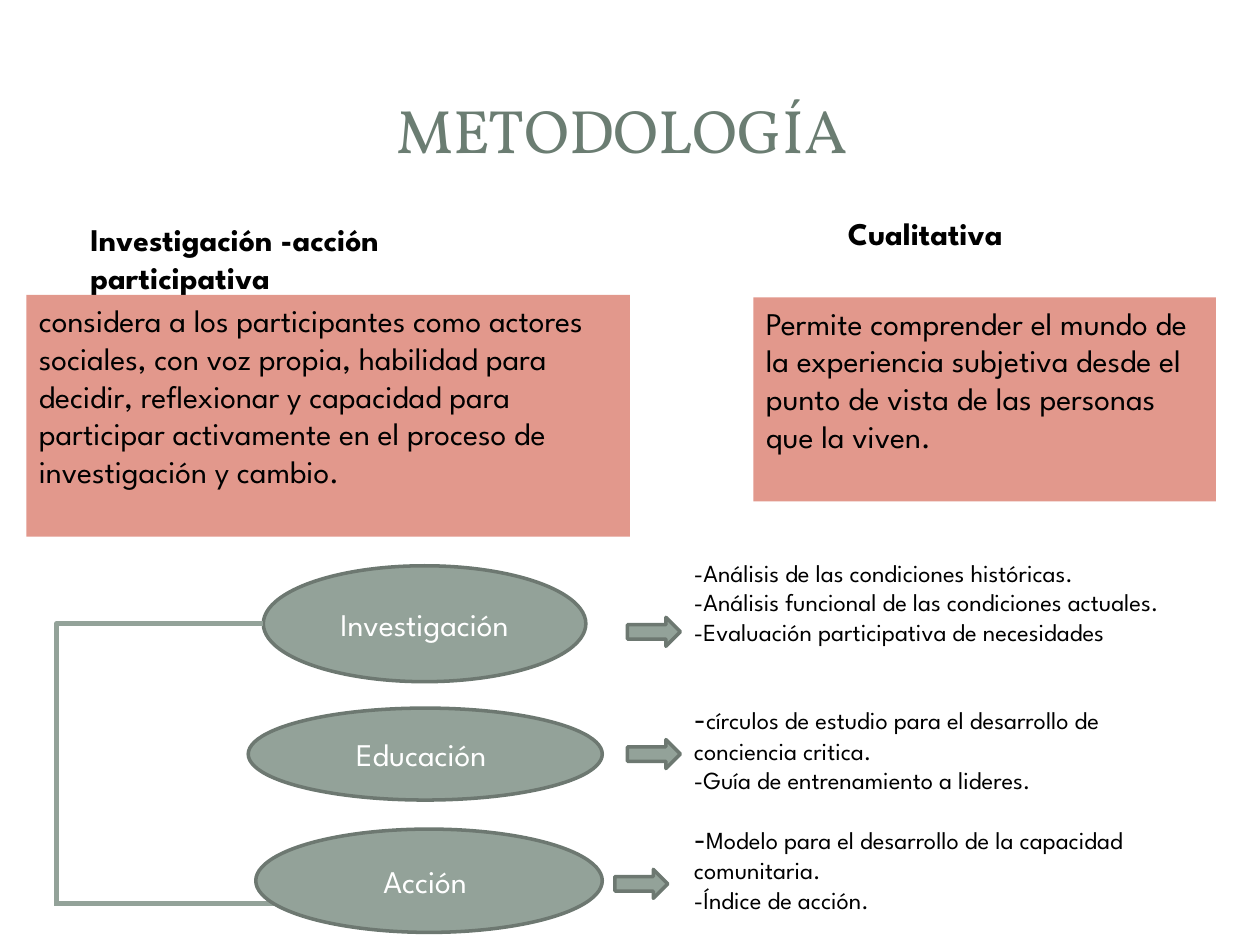
from lxml.etree import SubElement
from pptx import Presentation
from pptx.dml.color import RGBColor as RGB
from pptx.enum.shapes import MSO_CONNECTOR as Link, MSO_SHAPE as Form
from pptx.enum.text import MSO_ANCHOR as Anchor, MSO_AUTO_SIZE as Fit, PP_ALIGN as Align
from pptx.oxml.ns import qn
from pptx.util import Inches, Pt

COLS, ROWS = 100, 75
HUES = {"white": "FFFFFF", "black": "000000", "title": "6B7D72",
        "rose": "E2988C", "sage": "93A299", "edge": "6D7871"}


class Deck:
    """Holds the style and the current slide; lengths are grid columns and rows."""

    def __init__(self):
        self.prs = Presentation()
        self.prs.slide_width, self.prs.slide_height = Inches(10), Inches(7.5)
        self.slide = self.prs.slides.add_slide(self.prs.slide_layouts[5])
        self.font, self.size = "League Spartan", 18

    def grid(self, *lens):
        """Turn alternating columns and rows into lengths."""
        units = self.prs.slide_width / COLS, self.prs.slide_height / ROWS
        return [round(n * units[i % 2]) for i, n in enumerate(lens)]

    def style(self, run, hue, size=None, font=None, bold=False):
        run.font.name = font or self.font
        run.font.size = Pt(size or self.size)
        run.font.bold = bold
        run.font.color.rgb = RGB.from_string(HUES[hue])

    def title(self, text, box):
        head = self.slide.shapes.title
        head.left, head.top, head.width, head.height = self.grid(*box)
        frame = head.text_frame
        frame.text = text
        frame.vertical_anchor = Anchor.MIDDLE
        frame.paragraphs[0].alignment = Align.CENTER
        self.style(frame.paragraphs[0].runs[0], "title", 35, "Vollkorn")

    def prose(self, shape, lines, size=None, bold=False, lead=False):
        """Fill a shape from the top left; lead keeps the first dash at full size."""
        frame = shape.text_frame
        frame.word_wrap, frame.auto_size = True, Fit.SHAPE_TO_FIT_TEXT
        frame.vertical_anchor = Anchor.TOP
        for i, line in enumerate(lines):
            para = frame.add_paragraph() if i else frame.paragraphs[0]
            para.alignment = Align.LEFT
            if lead and i == 0:
                dash = para.add_run()
                dash.text, line = line[0], line[1:]
                self.style(dash, "black")
            run = para.add_run()
            run.text = line
            self.style(run, "black", size, bold=bold)

    def label(self, text, box):
        self.prose(self.slide.shapes.add_textbox(*self.grid(*box)), [text], bold=True)

    def form(self, kind, box, hue, edge=None):
        shape = self.slide.shapes.add_shape(kind, *self.grid(*box))
        shape.shadow.inherit = False
        shape.fill.solid()
        shape.fill.fore_color.rgb = RGB.from_string(HUES[hue])
        if edge:
            shape.line.color.rgb = RGB.from_string(HUES[edge])
            shape.line.width = Pt(2)
        else:
            shape.line.fill.background()
        return shape

    def panel(self, lines, box, hue, **look):
        self.prose(self.form(Form.RECTANGLE, box, hue), lines, **look)

    def oval(self, text, box):
        frame = self.form(Form.OVAL, box, "sage", "edge").text_frame
        frame.text = text
        frame.word_wrap, frame.vertical_anchor = True, Anchor.MIDDLE
        frame.paragraphs[0].alignment = Align.CENTER
        self.style(frame.paragraphs[0].runs[0], "white")

    def arrow(self, left, top):
        self.form(Form.RIGHT_ARROW, (left, top, 4.2, 2.3), "sage", "edge")

    def link(self, ends, bent=False):
        kind = Link.ELBOW if bent else Link.STRAIGHT
        line = self.slide.shapes.add_connector(kind, *self.grid(*ends))
        line.line.color.rgb = RGB.from_string(HUES["sage"])
        line.line.width = Pt(3)
        props = line._element.spPr
        SubElement(props, qn("a:effectLst"))
        if bent:  # a single corner
            props.find(qn("a:prstGeom")).set("prst", "bentConnector2")


def main():
    deck = Deck()
    deck.title("METODOLOGÍA ", (4.7, 4.5, 90.3, 11.4))
    deck.label("Cualitativa", (66.3, 16.5, 22.5, 4))
    deck.label("Investigación -acción participativa", (6.2, 17, 29.6, 7.1))
    deck.panel(["Permite comprender el mundo de la experiencia subjetiva desde "
                "el punto de vista de las personas que la viven."],
               (59.8, 23.6, 36.7, 16.2), "rose")
    deck.panel(["considera a los participantes como actores sociales, con voz "
                "propia, habilidad para decidir, reflexionar y capacidad para "
                "participar activamente en el proceso de investigación y cambio."],
               (2.1, 23.4, 47.9, 19.2), "rose")

    deck.oval("Investigación", (20.9, 44.9, 25.6, 9.2))
    deck.oval("Educación ", (19.7, 56.2, 28.1, 7.3))
    deck.link((4.5, 71.7, 24.4, 71.7))
    deck.oval("Acción ", (20.3, 65.8, 27.5, 8.2))
    deck.link((20.9, 49.5, 4.5, 71.9), bent=True)

    notes = [
        (43.8, 10.4, False, ["-Análisis de las condiciones históricas.",
                             "-Análisis funcional de las condiciones actuales.",
                             "-Evaluación participativa de necesidades"]),
        (54.9, 8.8, True, ["-círculos de estudio para el desarrollo de conciencia critica.",
                           "-Guía de entrenamiento a lideres."]),
        (64.4, 8.8, True, ["-Modelo para el desarrollo de la capacidad comunitaria.",
                           "-Índice de acción."]),
    ]
    for top, tall, lead, lines in notes:
        deck.panel(lines, (54.1, top, 42.4, tall), "white", size=14, lead=lead)
    for spot in [(49.8, 49), (49.8, 58.7), (48.8, 69)]:
        deck.arrow(*spot)
    deck.prs.save("out.pptx")


if __name__ == "__main__":
    main()
